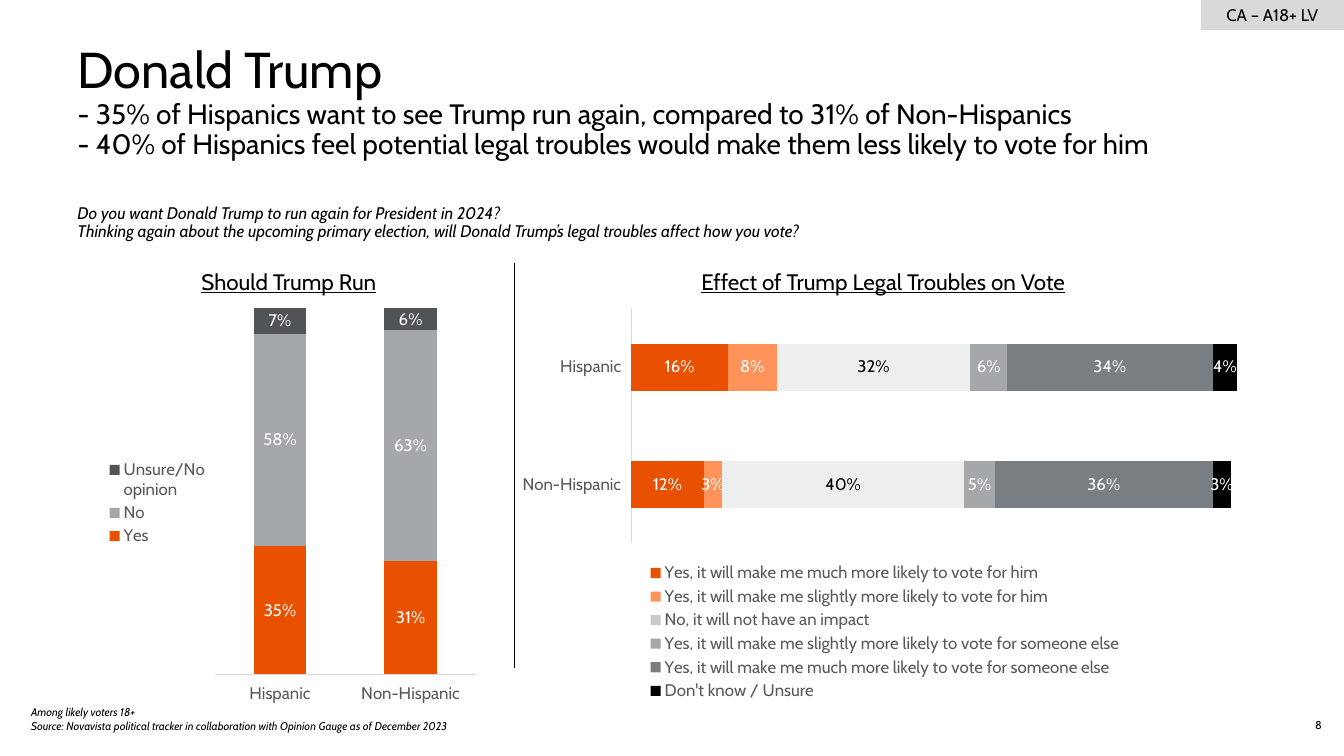
from copy import deepcopy
from lxml import etree
from pptx import Presentation
from pptx.chart.data import CategoryChartData
from pptx.dml.color import RGBColor
from pptx.enum.chart import XL_CHART_TYPE as Kind, XL_LABEL_POSITION as Spot
from pptx.enum.chart import XL_LEGEND_POSITION as Side, XL_TICK_MARK as Tick
from pptx.enum.chart import XL_TICK_LABEL_POSITION as Label
from pptx.enum.shapes import MSO_CONNECTOR as Line, MSO_SHAPE as Shape
from pptx.enum.text import MSO_ANCHOR as Anchor, MSO_AUTO_SIZE as Fit, PP_ALIGN as Align
from pptx.oxml.ns import qn
from pptx.util import Inches, Pt

FONT = "Cabin"
GROUPS = ("Hispanic", "Non-Hispanic")
# Series: name, values, fill, label colour, legend colour where it differs
RUN = [
    ("Yes", (0.35, 0.31), "E95100", "FFFFFF", None),
    ("No", (0.58, 0.63), "A4A8AB", "FFFFFF", None),
    ("Unsure/No opinion", (0.07, 0.06), "505457", "FFFFFF", None),
]
EFFECT = [
    ("Yes, it will make me much more likely to vote for him",
     (0.16, 0.12), "E95100", "FFFFFF", None),
    ("Yes, it will make me slightly more likely to vote for him",
     (0.08, 0.03), "FF9359", "FFFFFF", None),
    ("No, it will not have an impact",
     (0.32, 0.4), "EDEEEE", "000000", "C8CBCD"),
    ("Yes, it will make me slightly more likely to vote for someone else",
     (0.06, 0.05), "A4A8AB", "FFFFFF", None),
    ("Yes, it will make me much more likely to vote for someone else",
     (0.34, 0.36), "797E83", "FFFFFF", None),
    ("Don't know / Unsure", (0.04, 0.03), "000000", "FFFFFF", None),
]


def color(code):
    return RGBColor.from_string(code)


def paint(part, code):
    part.fill.solid()
    part.fill.fore_color.rgb = color(code)


def style(font, size, code="000000", italic=False, under=False):
    font.name, font.size, font.color.rgb = FONT, Pt(size), color(code)
    font.italic, font.underline = italic, under


def place(shape, box):
    shape.left, shape.top, shape.width, shape.height = map(Inches, box)


def write(shape, paras, align=Align.LEFT, anchor=Anchor.TOP, space=None, **look):
    """Fill a shape; each paragraph is a list of (lines, size) parts."""
    frame = shape.text_frame
    frame.word_wrap, frame.auto_size = True, Fit.NONE
    frame.vertical_anchor = anchor
    for i, parts in enumerate(paras):
        para = frame.add_paragraph() if i else frame.paragraphs[0]
        para.alignment, para.line_spacing = align, space
        para.space_before = para.space_after = Pt(0)
        lines = [(line, size) for text, size in parts for line in text.split("\n")]
        for n, (line, size) in enumerate(lines):
            run = para.add_run()
            run.text = line
            style(run.font, size, **look)
            if n < len(lines) - 1:
                para.add_line_break()
                para._p[-1].append(deepcopy(run._r.rPr))


def text(slide, box, paras, **look):
    write(slide.shapes.add_textbox(*map(Inches, box)), paras, **look)


def settle(node, box, area, inner=False):
    """Fix a chart part at an area of the slide, given the chart's box."""
    for old in node.findall(qn("c:layout")):
        node.remove(old)
    layout = etree.Element(qn("c:layout"))
    manual = etree.SubElement(layout, qn("c:manualLayout"))
    left, top, wide, high = box
    x, y, w, h = area
    rows = [("layoutTarget", "inner")] if inner else []
    rows += [("xMode", "edge"), ("yMode", "edge"),
             ("x", (x - left) / wide), ("y", (y - top) / high),
             ("w", w / wide), ("h", h / high)]
    for tag, val in rows:
        etree.SubElement(manual, qn("c:" + tag)).set("val", str(val))
    if inner:
        node.insert(0, layout)
    else:
        node.find(qn("c:legendPos")).addnext(layout)


def stack(slide, box, kind, series, side, plot, key):
    """Stacked chart; plot and key are the areas of its bars and legend."""
    data = CategoryChartData(number_format="0%")
    data.categories = GROUPS
    for name, vals, *_ in series:
        data.add_series(name, vals)
    chart = slide.shapes.add_chart(kind, *map(Inches, box), data).chart
    chart.has_title = False
    style(chart.font, 10)
    bars = chart.plots[0]
    bars.gap_width, bars.overlap, bars.vary_by_categories = 150, 100, False
    for item, (_, vals, fill, ink, legend) in zip(bars.series, series):
        paint(item.format, legend or fill)
        if legend:
            for i in range(len(vals)):
                paint(item.points[i].format, fill)
        tags = item.data_labels
        tags.show_value, tags.position = True, Spot.CENTER
        tags.number_format, tags.number_format_is_linked = "0%", False
        style(tags.font, 12, ink)

    cats, scale = chart.category_axis, chart.value_axis
    cats.major_tick_mark = cats.minor_tick_mark = Tick.NONE
    cats.tick_label_position = Label.LOW
    cats.reverse_order = kind == Kind.BAR_STACKED
    style(cats.tick_labels.font, 12, "595959")
    cats.format.line.color.rgb = color("D9D9D9")
    cats.format.line.width = Pt(0.75)
    scale.minimum_scale, scale.maximum_scale = 0, 1
    scale.has_major_gridlines = scale.visible = False

    chart.has_legend = True
    chart.legend.position, chart.legend.include_in_layout = side, False
    style(chart.legend.font, 12, "595959")
    settle(chart.legend._element, box, key)
    settle(bars._element.getparent(), box, plot, inner=True)


def panel(slide, left, wide, title, **parts):
    """A heading with its chart below."""
    text(slide, (left, 2.53, wide, 0.53), [[(title, 16)]],
         align=Align.CENTER, anchor=Anchor.MIDDLE, under=True)
    stack(slide, (left, 2.97, wide, 4.04), **parts)


def rule(slide, x, top, bottom):
    line = slide.shapes.add_connector(Line.STRAIGHT, *map(Inches, (x, top, x, bottom)))
    line.line.color.rgb, line.line.width = color("000000"), Pt(0.5)
    etree.SubElement(line._element.spPr, qn("a:effectLst"))


def head(slide):
    title = slide.shapes.title
    place(title, (0.67, 0.4, 12, 1.53))
    write(title, [[
        ("Donald Trump", 36),
        ("- 35% of Hispanics want to see Trump run again, compared to 31% of Non-Hispanics\n"
         "- 40% of Hispanics feel potential legal troubles would make them "
         "less likely to vote for him", 20)]], space=0.9)
    text(slide, (0.67, 1.93, 12, 0.57), [
        [("Do you want Donald Trump to run again for President in 2024?", 12)],
        [("Thinking again about the upcoming primary election, will Donald Trump’s "
          "legal troubles affect how you vote?", 12)],
    ], anchor=Anchor.MIDDLE, space=0.9, italic=True)


def badge(slide, box):
    tag = slide.shapes.add_shape(Shape.RECTANGLE, *map(Inches, box))
    tag.shadow.inherit = False
    paint(tag, "D9D9D9")
    tag.line.fill.background()
    write(tag, [[("CA – A18+ LV", 12)]], align=Align.CENTER, anchor=Anchor.MIDDLE)


def foot(slide):
    text(slide, (0.21, 6.95, 5.11, 0.4), [[
        ("Among likely voters 18+\nSource: Novavista political tracker in "
         "collaboration with Opinion Gauge as of December 2023", 8)]], italic=True)
    text(slide, (12.33, 7.08, 0.88, 0.27), [[("8", 8)]], align=Align.RIGHT)


def main():
    deck = Presentation()
    deck.slide_width, deck.slide_height = Inches(13.33), Inches(7.5)
    slide = deck.slides.add_slide(deck.slide_layouts[5])
    head(slide)
    badge(slide, (11.91, 0, 1.42, 0.3))
    panel(slide, 0.92, 3.89, "Should Trump Run", kind=Kind.COLUMN_STACKED,
          series=RUN, side=Side.LEFT,
          plot=(2.13, 3.06, 2.59, 3.63), key=(1, 4.53, 1.12, 0.92))
    panel(slide, 5.1, 7.32, "Effect of Trump Legal Troubles on Vote",
          kind=Kind.BAR_STACKED, series=EFFECT, side=Side.BOTTOM,
          plot=(6.26, 3.06, 6.01, 2.33), key=(6.38, 5.55, 4.8, 1.44))
    rule(slide, 5.1, 2.61, 6.63)
    foot(slide)
    deck.save("out.pptx")


if __name__ == "__main__":
    main()
